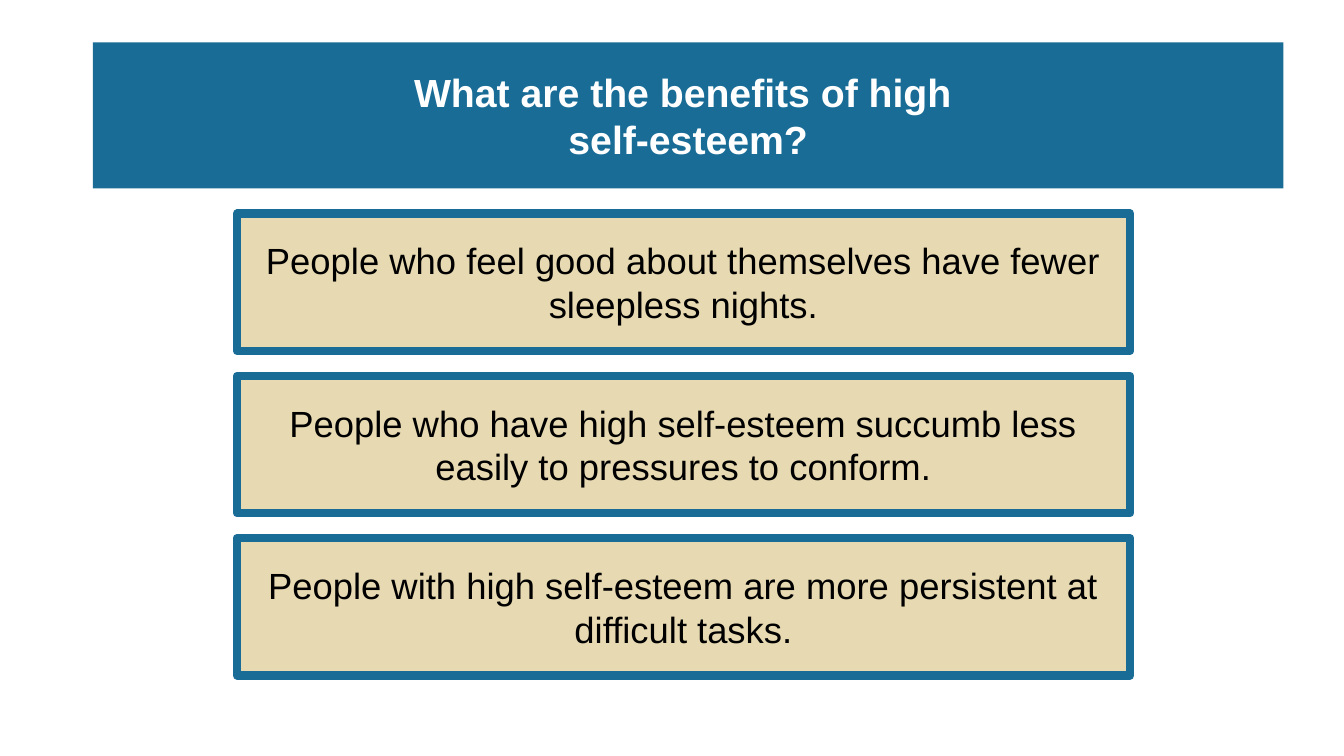
from pptx import Presentation
from pptx.dml.color import RGBColor
from pptx.enum.text import MSO_ANCHOR, MSO_AUTO_SIZE, PP_ALIGN
from pptx.util import Inches, Pt
from lxml.etree import SubElement
from pptx.oxml.ns import qn

BLUE = RGBColor(0x18, 0x6C, 0x96)
SAND = RGBColor(0xE7, 0xD9, 0xB1)
WHITE = RGBColor(0xFF, 0xFF, 0xFF)
BLACK = RGBColor(0x00, 0x00, 0x00)

BENEFITS = [
    "People who feel good about themselves have fewer sleepless nights.",
    "People who have high self-esteem succumb less easily to pressures to conform.",
    "People with high self-esteem are more persistent at difficult tasks.",
]
FIRST_TOP = 2.12
ROW_STEP = 1.61


class BenefitsSlide:
    """Holds the style and the current slide."""

    font_name = "Arial"

    def __init__(self, deck):
        # The comparison layout offers a title and several text placeholders
        self.slide = deck.slides.add_slide(deck.slide_layouts[4])
        self.bodies = list(self.slide.placeholders)[1:]

    def place(self, box, left, top, width, height, fill):
        box.left, box.top = Inches(left), Inches(top)
        box.width, box.height = Inches(width), Inches(height)
        box.fill.solid()
        box.fill.fore_color.rgb = fill

    def set_text(self, box, text, size, color, bold):
        frame = box.text_frame
        frame.text = text
        frame.word_wrap = True
        frame.auto_size = MSO_AUTO_SIZE.NONE
        frame.vertical_anchor = MSO_ANCHOR.MIDDLE
        para = frame.paragraphs[0]
        properties = para._p.get_or_add_pPr()
        properties.set("marL", "0")
        properties.set("indent", "0")
        SubElement(properties, qn("a:buNone"))
        para.alignment = PP_ALIGN.CENTER
        para.space_before = Pt(0)
        for span in para.runs:
            span.font.name = self.font_name
            span.font.size = Pt(size)
            span.font.bold = bold
            span.font.color.rgb = color

    def title(self, text):
        box = self.slide.shapes.title
        self.place(box, 0.92, 0.42, 11.81, 1.45, BLUE)
        self.set_text(box, text, 28, WHITE, True)

    def benefit(self, text, top):
        box = self.bodies.pop(0)
        self.place(box, 2.35, top, 8.86, 1.36, SAND)
        box.line.color.rgb = BLUE
        box.line.width = Pt(6)
        self.set_text(box, text, 26, BLACK, False)

    def remove_unused(self):
        for box in self.bodies:
            box.element.getparent().remove(box.element)


def main():
    deck = Presentation()
    deck.slide_width, deck.slide_height = Inches(13.33), Inches(7.5)
    page = BenefitsSlide(deck)

    # Title band
    page.title("What are the benefits of high \vself-esteem?")

    # Evenly spaced benefit boxes
    for row, text in enumerate(BENEFITS):
        page.benefit(text, FIRST_TOP + row * ROW_STEP)
    page.remove_unused()

    deck.save("out.pptx")


if __name__ == "__main__":
    main()
